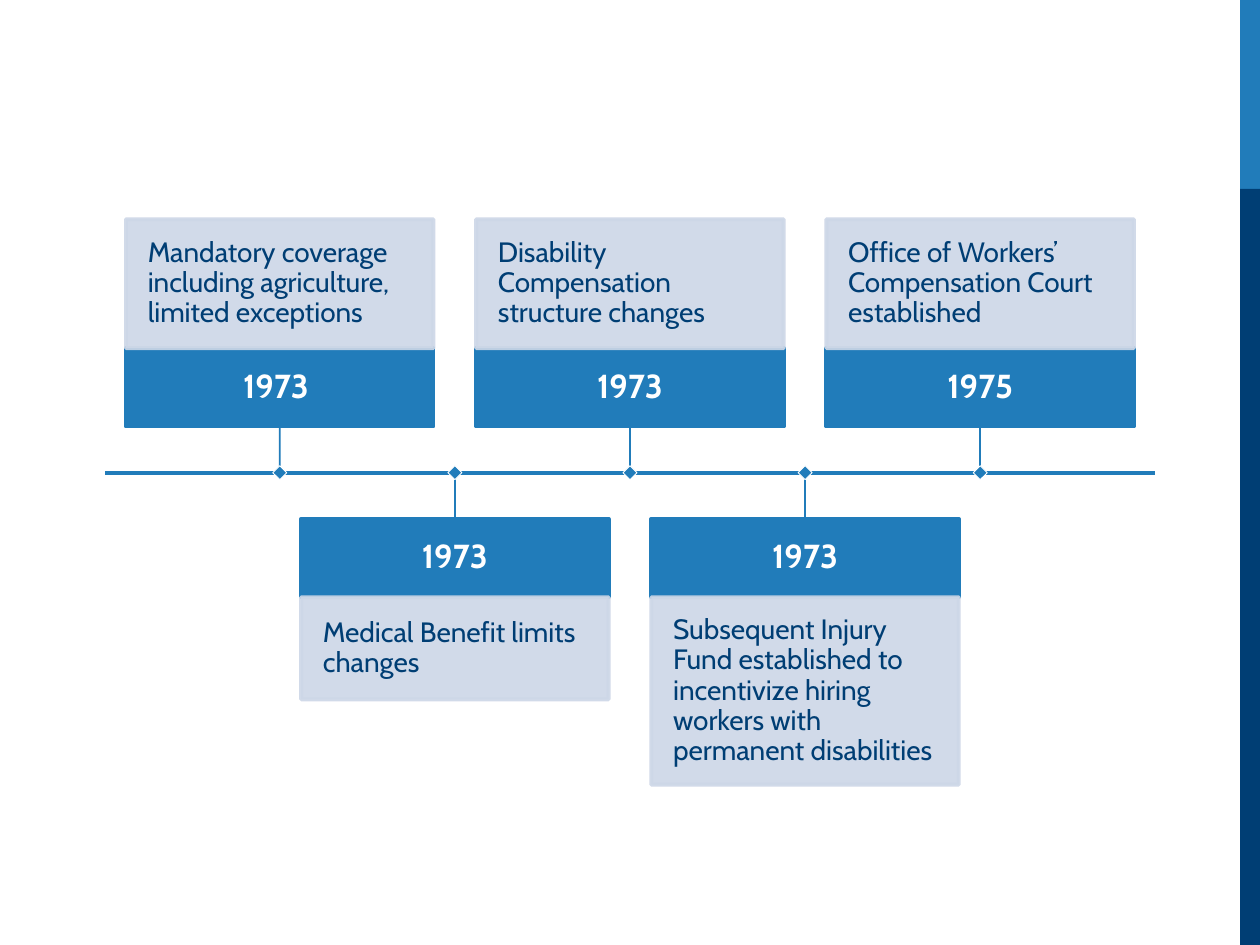
from lxml import etree
from pptx import Presentation
from pptx.dml.color import RGBColor
from pptx.enum.shapes import MSO_CONNECTOR, MSO_SHAPE
from pptx.enum.text import MSO_ANCHOR, PP_ALIGN
from pptx.oxml.ns import qn
from pptx.util import Cm, Pt

RECTANGLE = MSO_SHAPE.RECTANGLE
STRAIGHT = MSO_CONNECTOR.STRAIGHT
MIDDLE = MSO_ANCHOR.MIDDLE
LEFT, CENTER = PP_ALIGN.LEFT, PP_ALIGN.CENTER
TOP_SIDE, BOTTOM_SIDE = 0, 2

BLUE, NAVY, PALE, WHITE = "217CBA", "003E74", "CDD7E7", "FFFFFF"
FONT = "Cabin"

AXIS = 9.53
FIRST_CENTER, PITCH = 5.64, 3.53
BOX_WIDTH, YEAR_HEIGHT, STEM = 6.2, 1.58, 0.93

EVENTS = [
    ("1973 ", "Mandatory coverage including agriculture, limited exceptions", 2.6),
    ("1973", "Medical Benefit limits changes", 2.06),
    ("1973", "Disability Compensation structure changes", 2.6),
    ("1973", "Subsequent Injury Fund established to incentivize hiring "
             "workers with permanent disabilities", 3.78),
    ("1975", "Office of Workers’ Compensation Court established", 2.6),
]


def color(value):
    return RGBColor.from_string(value)


def write(shape, text, size, text_color, align=LEFT, bold=False, inset=0.3):
    frame = shape.text_frame
    frame.word_wrap = True
    frame.vertical_anchor = MIDDLE
    frame.margin_left = frame.margin_right = Cm(inset)
    frame.margin_top = frame.margin_bottom = Cm(inset)
    paragraph = frame.paragraphs[0]
    paragraph.alignment = align
    paragraph.line_spacing = 0.9
    run = paragraph.add_run()
    run.text = text
    run.font.name = FONT
    run.font.size = Pt(size)
    run.font.bold = bold
    run.font.color.rgb = color(text_color)


class Timeline:
    def __init__(self, slide):
        self.slide = slide

    def box(self, left, top, width, height, fill, line=None, line_width=2.25, opacity=100):
        shape = self.slide.shapes.add_shape(
            RECTANGLE, Cm(left), Cm(top), Cm(width), Cm(height))
        shape.shadow.inherit = False
        shape.fill.solid()
        shape.fill.fore_color.rgb = color(fill)
        if line:
            shape.line.color.rgb = color(line)
            shape.line.width = Pt(line_width)
        else:
            shape.line.fill.background()
        if opacity < 100:
            for element in shape._element.spPr.iter(qn("a:srgbClr")):
                etree.SubElement(element, qn("a:alpha"), val=str(opacity * 1000))
        return shape

    def line(self, start, end, width):
        connector = self.slide.shapes.add_connector(
            STRAIGHT, *(Cm(value) for value in start + end))
        connector.line.color.rgb = color(BLUE)
        connector.line.width = Pt(width)
        etree.SubElement(connector._element.spPr, qn("a:effectLst"))
        return connector

    def marker(self, center, side=0.2):
        shape = self.box(center - side / 2, AXIS - side / 2, side, side, BLUE, WHITE, 0.5)
        shape.rotation = 45

    def event(self, center, above, year, description, height):
        left = center - BOX_WIDTH / 2
        if above:
            year_top = AXIS - STEM - YEAR_HEIGHT
            description_top, side, stem_start = year_top - height, BOTTOM_SIDE, AXIS - STEM
        else:
            year_top = AXIS + STEM
            description_top, side, stem_start = year_top + YEAR_HEIGHT, TOP_SIDE, year_top
        year_box = self.box(left, year_top, BOX_WIDTH, YEAR_HEIGHT, BLUE, BLUE)
        write(year_box, year, 19, WHITE, align=CENTER, bold=True)
        description_box = self.box(
            left, description_top, BOX_WIDTH, height, PALE, PALE, opacity=90)
        write(description_box, description, 16, NAVY, inset=0.44)
        stem = self.line((center, stem_start), (center, AXIS), 1)
        stem.begin_connect(year_box, side)
        self.marker(center)


def main():
    presentation = Presentation()
    presentation.slide_width, presentation.slide_height = Cm(25.4), Cm(19.05)
    slide = presentation.slides.add_slide(presentation.slide_layouts[6])
    timeline = Timeline(slide)
    timeline.box(25, 0, 0.4, 3.81, BLUE)
    timeline.box(25, 3.81, 0.4, 15.24, NAVY)
    timeline.line((2.12, AXIS), (23.28, AXIS), 2.25)
    for index, event in enumerate(EVENTS):
        timeline.event(FIRST_CENTER + index * PITCH, index % 2 == 0, *event)
    presentation.save("out.pptx")


if __name__ == "__main__":
    main()
